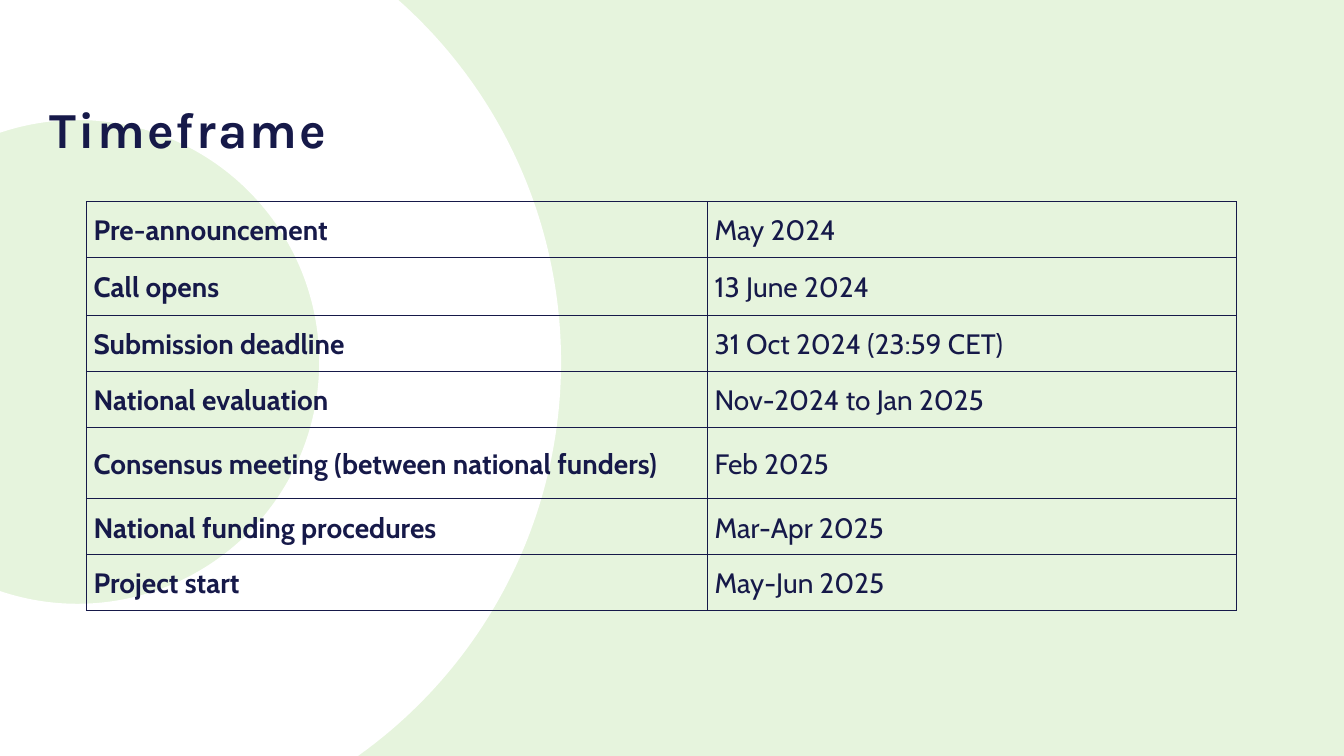
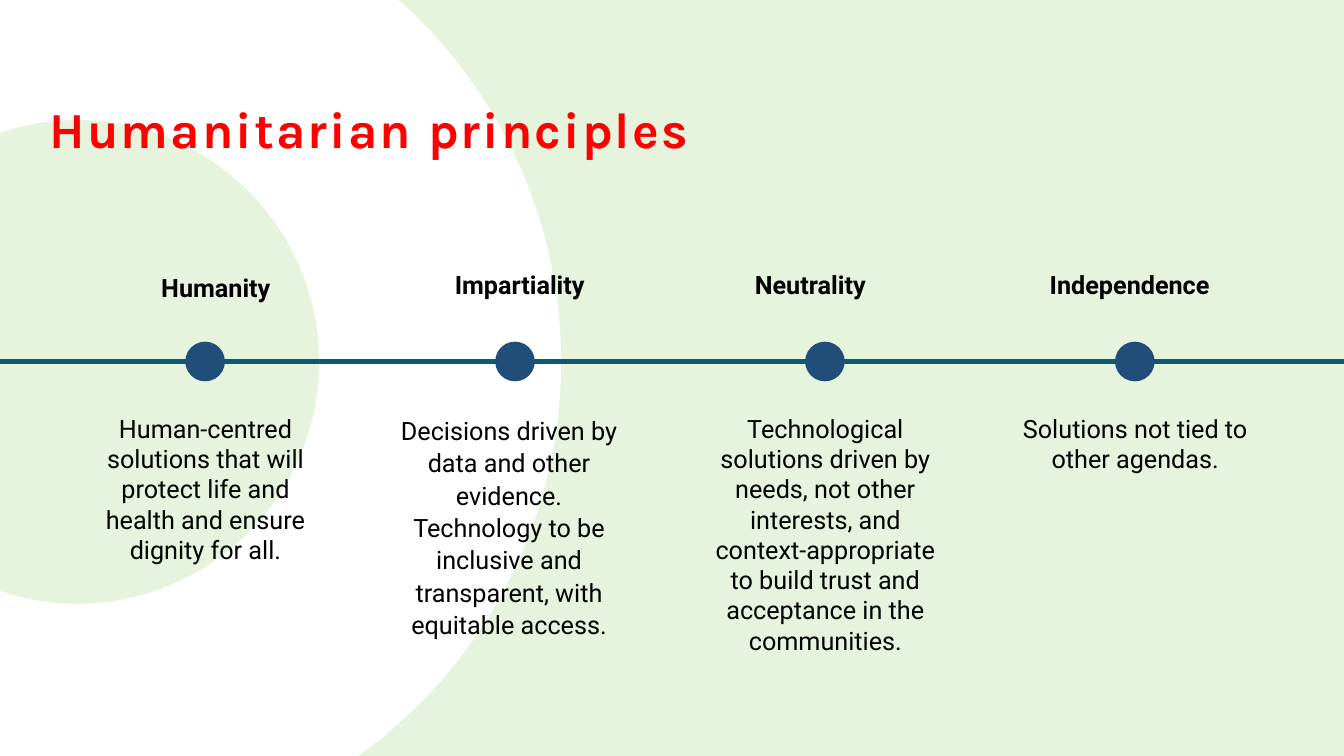
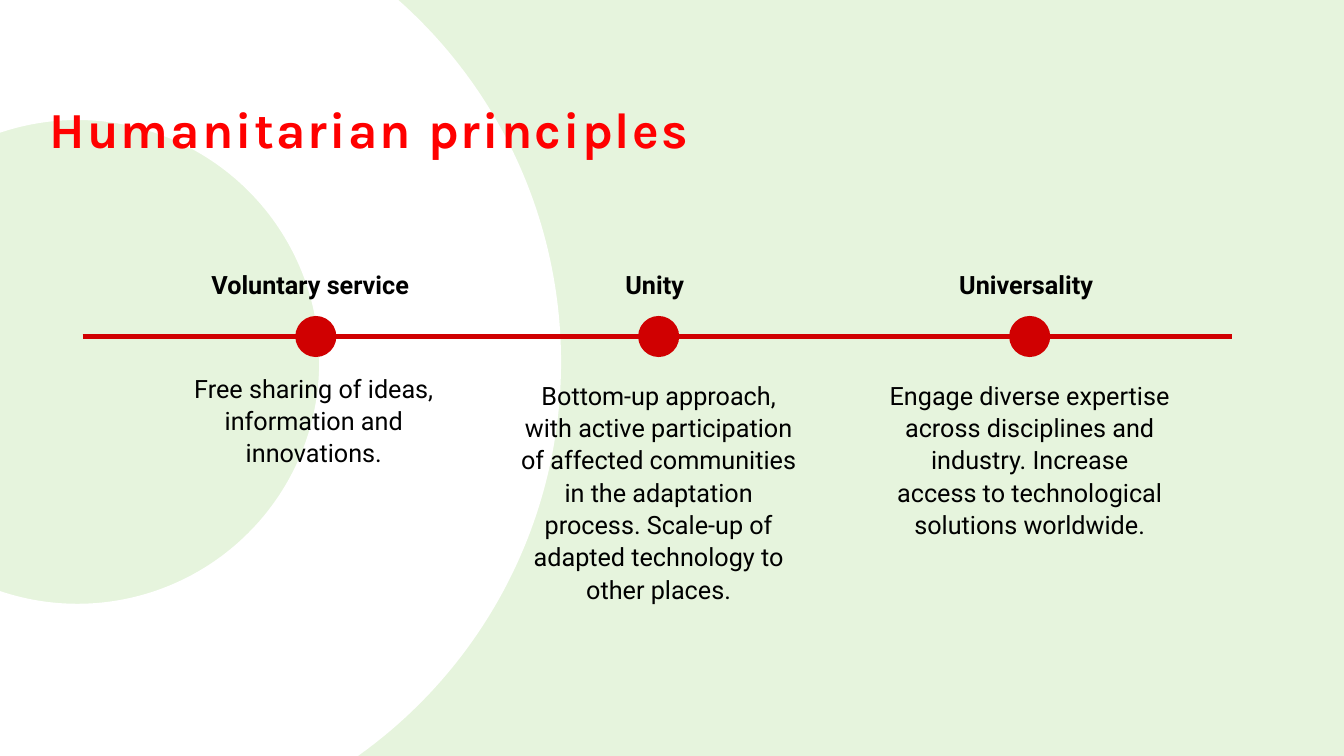
from dataclasses import dataclass

from lxml.etree import SubElement
from pptx import Presentation
from pptx.dml.color import RGBColor
from pptx.enum.shapes import MSO_CONNECTOR, MSO_SHAPE
from pptx.enum.text import MSO_ANCHOR, MSO_AUTO_SIZE, PP_ALIGN
from pptx.oxml.ns import qn
from pptx.util import Cm, Pt

# Content
PLAN = [  # stage, date, row height
    ("Pre-announcement", "May 2024", 1.41),
    ("Call opens", "13 June 2024", 1.46),
    ("Submission deadline", "31 Oct 2024 (23:59 CET)", 1.41),
    ("National evaluation", "Nov-2024 to Jan 2025", 1.41),
    ("Consensus meeting (between national funders)", "Feb 2025", 1.8),
    ("National funding procedures", "Mar-Apr 2025", 1.41),
    ("Project start", "May-Jun 2025", 1.41),
]
PLAN_COLS = (15.65, 13.34)

# Each step: (head, centre, top), dot centre, (body, centre, top, height, leading)
LINES = [
    dict(
        title="Humanitarian principles", color="0F5A6F", dot="204E78", edge=None,
        start=0, end=33.87, axis=9.11, width=6.35,
        steps=[
            (("Humanity", 5.44, 6.73), 5.17,
             ("Human-centred solutions that will protect life and health "
              "and ensure dignity for all.", 5.18, 10.29, 4.11, 1)),
            (("Impartiality", 13.1, 6.65), 12.98,
             ("Decisions driven by data and other evidence. Technology to be "
              "inclusive and transparent, with equitable access.",
              12.83, 10.29, 5.97, 1.07)),
            (("Neutrality", 20.42, 6.65), 20.79,
             ("Technological solutions driven by needs, not other interests, "
              "and context-appropriate to build trust and acceptance in the "
              "communities.", 20.8, 10.29, 6.4, 1)),
            (("Independence", 28.47, 6.65), 28.6,
             ("Solutions not tied to other agendas.", 28.61, 10.29, 1.8, 1)),
        ],
    ),
    dict(
        title="Humanitarian principles", color="D00001", dot="D00001", edge=1,
        start=2.08, end=31.06, axis=8.48, width=7.6,
        steps=[
            (("Voluntary service", 7.82, 6.65), 7.96,
             ("Free sharing of ideas, information and innovations.",
              7.91, 9.22, 2.67, 1.07)),
            (("Unity", 16.5, 6.65), 16.6,
             ("Bottom-up approach, with active participation of affected "
              "communities in the adaptation process. Scale-up of adapted "
              "technology to other places.", 16.6, 9.4, 5.97, 1.07)),
            (("Universality", 25.86, 6.65), 25.95,
             ("Engage diverse expertise across disciplines and industry. "
              "Increase access to technological solutions worldwide.",
              25.95, 9.4, 4.32, 1.07)),
        ],
    ),
]


@dataclass(frozen=True)
class Theme:
    ground: str = "E6F4DD"
    ring: str = "FFFFFF"
    navy: str = "161949"
    red: str = "FF0000"
    black: str = "000000"
    head_font: str = "Karla"
    cell_font: str = "Cabin"
    text_font: str = "Roboto"
    head: float = 36
    cell: float = 20
    text: float = 18
    rule: float = 1
    axis: float = 3.75
    track: int = 150  # title letter spacing, 1/100 pt
    dot: float = 1


T = Theme()


def rgb(code):
    return RGBColor.from_string(code)


def style(para, name, size, color, bold=False):
    for run in para.runs:
        font = run.font
        font.name, font.size, font.bold = name, Pt(size), bold
        font.color.rgb = rgb(color)


def add_shape(slide, kind, left, top, size, color, edge=None):
    shape = slide.shapes.add_shape(kind, Cm(left), Cm(top), Cm(size), Cm(size))
    shape.shadow.inherit = False
    shape.fill.solid()
    shape.fill.fore_color.rgb = rgb(color)
    if edge:
        shape.line.color.rgb = rgb(color)
        shape.line.width = Pt(edge)
    else:
        shape.line.fill.background()
    return shape


def set_ground(slide, layout):
    """Give the layout its green ground and white ring."""
    layout.background.fill.solid()
    layout.background.fill.fore_color.rgb = rgb(T.ground)
    ring = add_shape(slide, MSO_SHAPE.DONUT, -10.24, -3.07, 24.38, T.ring)
    ring.element.xpath(".//p:cNvPr")[0].set("id", "20")
    layout.shapes.element.insert(2, ring.element)


def add_slide(deck, layout, title, color):
    slide = deck.slides.add_slide(layout)
    box = slide.shapes.title
    box.left, box.top, box.width, box.height = Cm(1), Cm(1.02), Cm(31.98), Cm(3.12)
    frame = box.text_frame
    frame.text = title
    frame.vertical_anchor = MSO_ANCHOR.BOTTOM
    para = frame.paragraphs[0]
    para.alignment, para.line_spacing = PP_ALIGN.LEFT, 0.9
    style(para, T.head_font, T.head, color, True)
    para.runs[0].font._element.set("spc", str(T.track))
    return slide


def add_text(slide, text, mid, top, width, height, bold=False, lead=1):
    box = slide.shapes.add_textbox(
        Cm(mid - width / 2), Cm(top), Cm(width), Cm(height))
    frame = box.text_frame
    frame.word_wrap = True
    frame.auto_size = MSO_AUTO_SIZE.SHAPE_TO_FIT_TEXT
    frame.text = text
    para = frame.paragraphs[0]
    para.alignment, para.line_spacing = PP_ALIGN.CENTER, lead
    style(para, T.text_font, T.text, T.black, bold)


def add_rules(cell):
    props = cell._tc.get_or_add_tcPr()
    for side in ("lnL", "lnR", "lnT", "lnB"):
        line = SubElement(props, qn(f"a:{side}"), w=str(Pt(T.rule)))
        fill = SubElement(line, qn("a:solidFill"))
        SubElement(fill, qn("a:srgbClr"), val=T.navy)


def add_plan(slide):
    high = sum(row[2] for row in PLAN)
    frame = slide.shapes.add_table(
        len(PLAN), 2, Cm(2.18), Cm(5.08), Cm(sum(PLAN_COLS)), Cm(high))
    table = frame.table
    table.first_row = table.horz_banding = False
    for col, width in zip(table.columns, PLAN_COLS):
        col.width = Cm(width)
    for row, (stage, date, height) in zip(table.rows, PLAN):
        row.height = Cm(height)
        for cell, text, bold in zip(row.cells, (stage, date), (True, False)):
            cell.text_frame.text = text
            cell.vertical_anchor = MSO_ANCHOR.MIDDLE
            cell.margin_left = cell.margin_right = Cm(0.18)
            cell.margin_top = cell.margin_bottom = 0
            para = cell.text_frame.paragraphs[0]
            para.line_spacing, para.space_after = 1.07, Pt(8)
            style(para, T.cell_font, T.cell, T.navy, bold)
            add_rules(cell)
            cell.fill.background()


def add_line(slide, data):
    y = data["axis"]
    line = slide.shapes.add_connector(
        MSO_CONNECTOR.STRAIGHT, Cm(data["start"]), Cm(y), Cm(data["end"]), Cm(y))
    line.line.color.rgb = rgb(data["color"])
    line.line.width = Pt(T.axis)
    SubElement(line.element.spPr, qn("a:effectLst"))
    for (head, mid, top), dot, body in data["steps"]:
        add_text(slide, head, mid, top, 6, 1.02, bold=True)
        add_shape(slide, MSO_SHAPE.OVAL, dot - T.dot / 2, y - T.dot / 2,
                  T.dot, data["dot"], data["edge"])
        text, mid, top, height, lead = body
        add_text(slide, text, mid, top, data["width"], height, lead=lead)


def main():
    deck = Presentation()
    deck.slide_width, deck.slide_height = Cm(33.87), Cm(19.05)
    layout = deck.slide_layouts.get_by_name("Title Only")

    # Timeframe table
    slide = add_slide(deck, layout, "Timeframe", T.navy)
    set_ground(slide, layout)
    add_plan(slide)

    # Principles along a line
    for data in LINES:
        add_line(add_slide(deck, layout, data["title"], T.red), data)

    deck.save("out.pptx")


if __name__ == "__main__":
    main()
